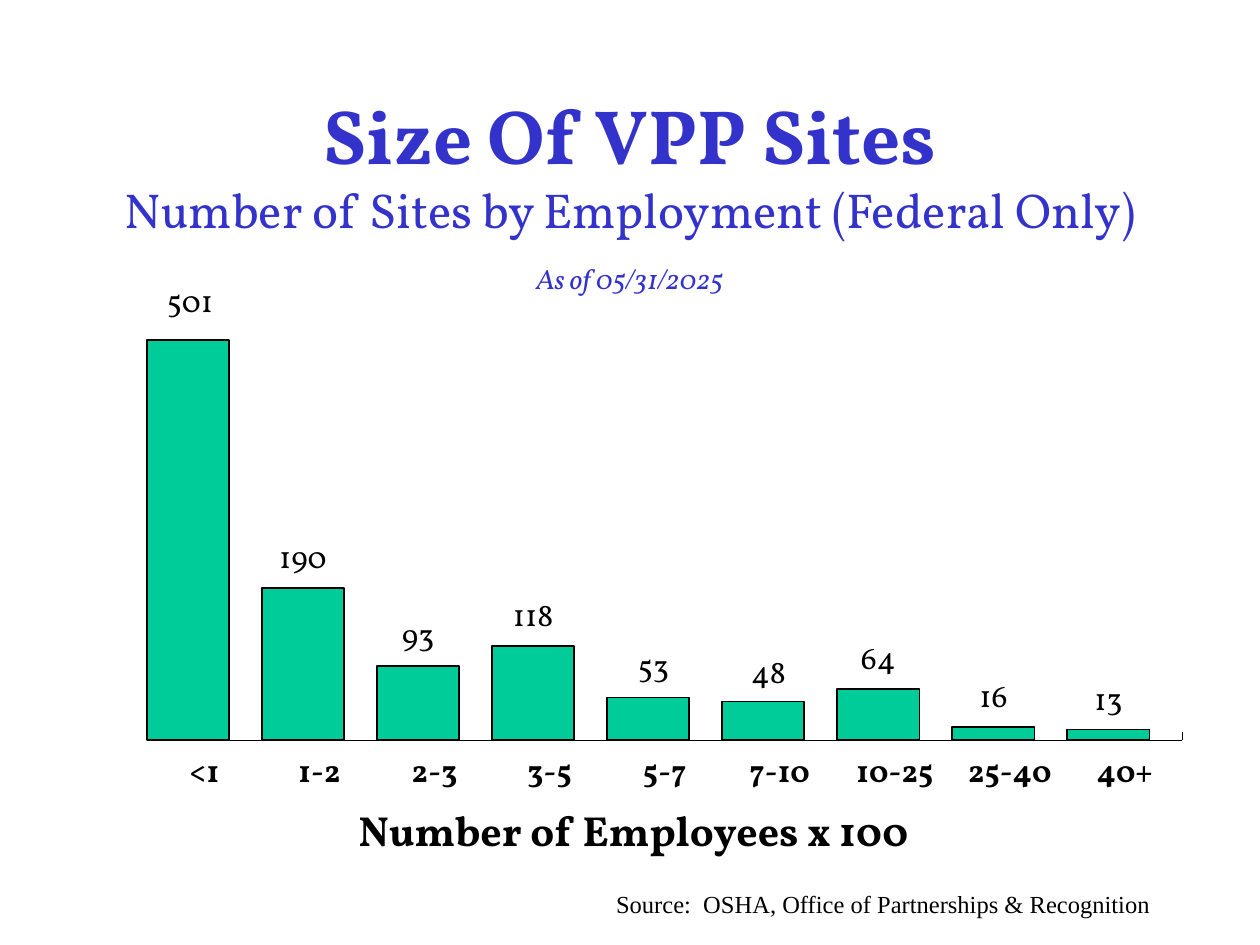
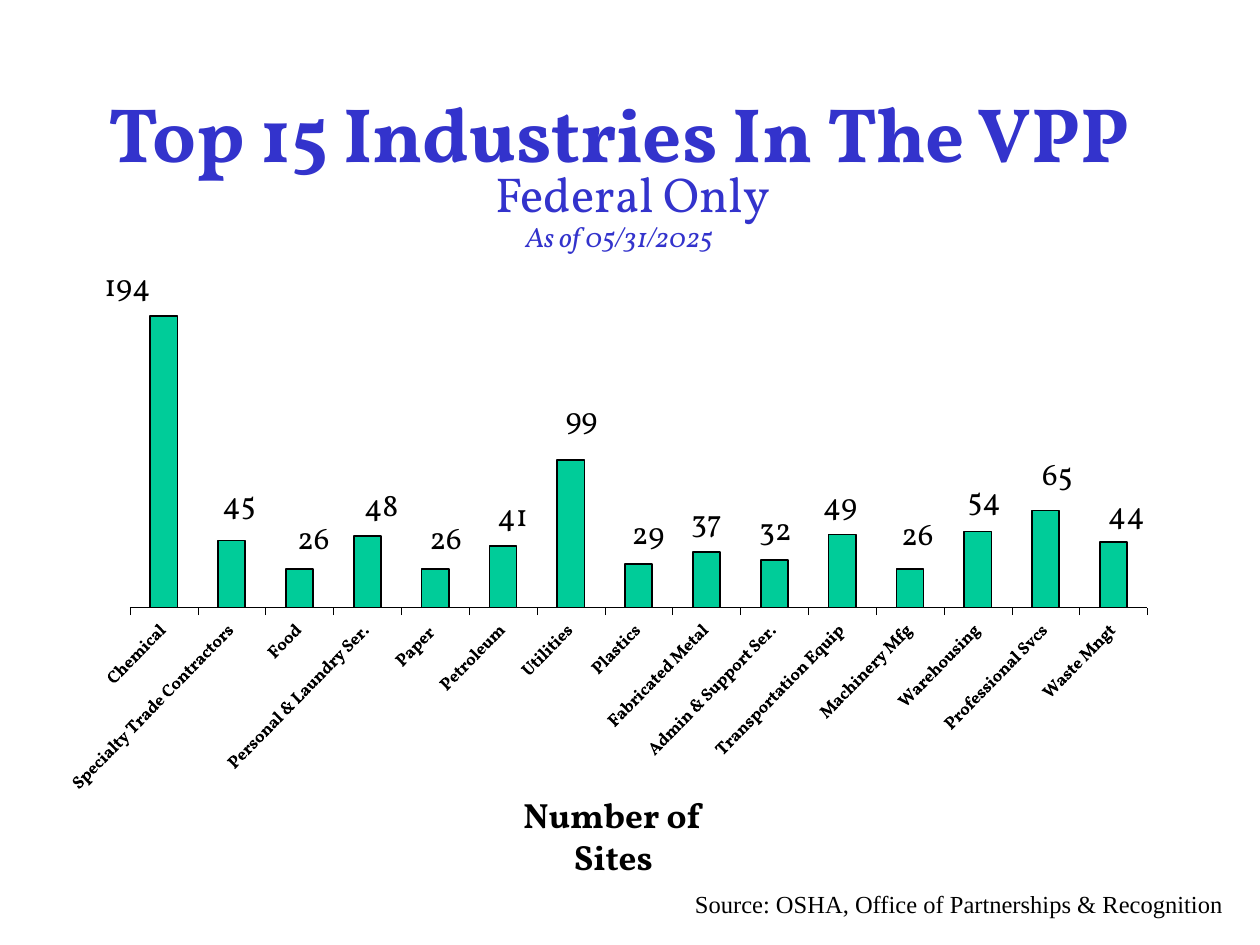
from dataclasses import dataclass
from typing import Optional

from lxml import etree
from pptx import Presentation
from pptx import util as u
from pptx.chart import data as cd
from pptx.dml import color
from pptx.enum import chart as ch, text as te
from pptx.oxml import ns

COLORS = {"title": "3333CC", "bar": "00CC99", "spare": "CCCCFF", "ink": "000000"}
HEAD_FONT, SOURCE_FONT = "Vollkorn", "Times New Roman"
LABEL_PT = 18
DATE_TEXT = "As of 05/31/2025"


@dataclass
class Box:
    """Place on the slide, in centimetres."""
    left: float
    top: float
    width: float
    height: float

    def lengths(self) -> tuple:
        return tuple(u.Cm(v) for v in (self.left, self.top, self.width, self.height))


@dataclass
class Bar:
    """One category; dx and dy move its label by a share of the chart's size."""
    name: str
    value: int
    dx: float = 0
    dy: float = 0
    label: Optional[str] = None


@dataclass
class BarChart:
    box: Box
    bars: list
    plot: tuple
    top_value: int
    gap: int
    overlap: int
    axis_pt: int
    tick: ch.XL_TICK_MARK
    label_offset: int = 100
    empty_series: int = 0
    angle: int = 0
    value_axis: bool = True


SIZE_CHART = BarChart(
    Box(2.49, 5.27, 21.39, 10.95),
    [Bar("<1", 501, 0.002, -0.015), Bar("1-2", 190), Bar("2-3", 93), Bar("3-5", 118),
     Bar("5-7", 53, 0.005, -0.002), Bar("7-10", 48, 0.005, 0.002), Bar("10-25", 64),
     Bar("25-40", 16), Bar("40+", 13)],
    plot=(0.022, 0, 0.976, 0.881), top_value=600, gap=0, overlap=80,
    axis_pt=LABEL_PT, tick=ch.XL_TICK_MARK.INSIDE, label_offset=0, empty_series=2)

INDUSTRY_CHART = BarChart(
    Box(1.37, 4.58, 22, 11.66),
    [Bar("Chemical", 195, -0.034, 0, "194"),
     Bar("Specialty Trade Contractors", 45, 0.007, -0.012),
     Bar("Food", 26, 0.013),
     Bar("Personal & Laundry Ser.", 48, 0.013),
     Bar("Paper ", 26, 0.01),
     Bar("Petroleum", 41, 0.009),
     Bar("Utilities", 99, 0.01, -0.019),
     Bar("Plastics", 29, 0.009),
     Bar("Fabricated Metal", 37),
     Bar("Admin & Support Ser.", 32, 0.001),
     Bar("Transportation Equip", 49, -0.002),
     Bar("Machinery Mfg", 26, 0.007, -0.006),
     Bar("Warehousing", 51, 0.006, -0.002, "54"),
     Bar("Professional Svcs", 65, 0.011, -0.01),
     Bar("Waste Mngt", 44, 0.012, 0.003)],
    plot=(0.037, 0.012, 0.952, 0.646), top_value=250, gap=150, overlap=0,
    axis_pt=10, tick=ch.XL_TICK_MARK.OUTSIDE, angle=-45, value_axis=False)


def rgb(name: str) -> color.RGBColor:
    return color.RGBColor.from_string(COLORS[name])


def set_font(font, size: float, name: str = HEAD_FONT, ink: str = "ink",
             bold: bool = False, italic: bool = False) -> None:
    font.size, font.name = u.Pt(size), name
    font.bold, font.italic = bold, italic
    font.color.rgb = rgb(ink)


def add_text(s, box: Box, text: str, size: float, *, subtitle: str = "",
             centre: bool = False, middle: bool = False, wrap: bool = True,
             **fmt) -> None:
    """Text box; a subtitle follows on a second line in a lighter style."""
    tf = s.shapes.add_textbox(*box.lengths()).text_frame
    tf.word_wrap = wrap
    tf.vertical_anchor = te.MSO_ANCHOR.MIDDLE if middle else te.MSO_ANCHOR.TOP
    p = tf.paragraphs[0]
    p.alignment = te.PP_ALIGN.CENTER if centre else te.PP_ALIGN.LEFT
    r = p.add_run()
    r.text = text
    set_font(r.font, size, **fmt)
    if subtitle:
        p.add_line_break()
        r = p.add_run()
        r.text = subtitle
        set_font(r.font, 28, ink="title")


def add_layout(parent, index: int, **values) -> None:
    """Manual chart layout as a child of the plot area or a data label."""
    for old in parent.findall(ns.qn("c:layout")):
        parent.remove(old)
    layout = etree.Element(ns.qn("c:layout"))
    manual = etree.SubElement(layout, ns.qn("c:manualLayout"))
    for tag, value in values.items():
        etree.SubElement(manual, ns.qn(f"c:{tag}")).set("val", str(value))
    parent.insert(index, layout)


def add_bar_labels(series, bars: list) -> None:
    series.data_labels.show_value = True
    set_font(series.data_labels.font, LABEL_PT, bold=True)
    for i, bar in enumerate(bars):
        label = series.points[i].data_label
        r = label.text_frame.paragraphs[0].add_run()
        r.text = bar.label or str(bar.value)
        set_font(r.font, LABEL_PT)
        label.position = ch.XL_LABEL_POSITION.OUTSIDE_END
    for bar, element in zip(bars, series._element.xpath("c:dLbls/c:dLbl")):
        if bar.dx or bar.dy:
            add_layout(element, 1, x=bar.dx, y=bar.dy)

    # Moved labels have no leader lines
    labels = series._element.find(ns.qn("c:dLbls"))
    leader = labels.find(ns.qn("c:showLeaderLines"))
    if leader is None:
        leader = etree.SubElement(labels, ns.qn("c:showLeaderLines"))
    leader.set("val", "0")


def add_bar_chart(s, model: BarChart) -> None:
    data = cd.CategoryChartData()
    data.categories = [b.name for b in model.bars]
    data.add_series("Series 1", [b.value for b in model.bars])
    for n in range(model.empty_series):
        data.add_series(f"Series {n + 2}", [None] * len(model.bars))
    chart = s.shapes.add_chart(ch.XL_CHART_TYPE.COLUMN_CLUSTERED,
                               *model.box.lengths(), data).chart
    chart.has_title = chart.has_legend = False
    set_font(chart.font, LABEL_PT, bold=True)

    # Bars
    plot = chart.plots[0]
    plot.vary_by_categories = False
    plot.gap_width, plot.overlap = model.gap, model.overlap
    for series, fill in zip(plot.series, ("bar", "title", "spare")):
        series.format.fill.solid()
        series.format.fill.fore_color.rgb = rgb(fill)
        series.format.line.color.rgb = rgb("ink")
        series.format.line.width = u.Pt(1)
    add_bar_labels(plot.series[0], model.bars)

    # Axes
    cat, val = chart.category_axis, chart.value_axis
    cat.major_tick_mark = model.tick
    cat.minor_tick_mark = ch.XL_TICK_MARK.NONE
    cat.tick_label_position = ch.XL_TICK_LABEL_POSITION.LOW
    cat.tick_labels.offset = model.label_offset
    cat.format.line.color.rgb = rgb("ink")
    cat.format.line.width = u.Pt(0.25)
    set_font(cat.tick_labels.font, model.axis_pt, bold=True)
    if model.angle:
        body = cat._element.find(ns.qn("c:txPr")).find(ns.qn("a:bodyPr"))
        body.set("rot", str(model.angle * 60000))
        body.set("vert", "horz")
    val.minimum_scale, val.maximum_scale = 0, model.top_value
    val.has_major_gridlines = False
    val.major_tick_mark = val.minor_tick_mark = ch.XL_TICK_MARK.NONE
    val.tick_label_position = ch.XL_TICK_LABEL_POSITION.NONE
    val.format.line.fill.background()
    val.visible = model.value_axis

    # Inner plot area
    x, y, w, h = model.plot
    area = chart._chartSpace.xpath("c:chart/c:plotArea")[0]
    add_layout(area, 0, layoutTarget="inner", xMode="edge", yMode="edge",
               x=x, y=y, w=w, h=h)


def add_title(s, left: float, top: float, text: str, subtitle: str = "") -> None:
    add_text(s, Box(left, top, 21.59, 3.18), text, 44, subtitle=subtitle,
             centre=True, middle=True, ink="title", bold=True)


def add_date(s, left: float, top: float) -> None:
    add_text(s, Box(left, top, 7.19, 1.9), DATE_TEXT, 16, centre=True,
             middle=True, ink="title", italic=True)


def add_source(s, left: float, width: float, text: str) -> None:
    add_text(s, Box(left, 17.79, width, 0.84), text, 14, name=SOURCE_FONT)


def size_slide(s) -> None:
    add_bar_chart(s, SIZE_CHART)
    add_title(s, 1.91, 1.7, "Size Of VPP Sites",
              "Number of Sites by Employment (Federal Only)")
    add_date(s, 9.1, 4.66)
    add_text(s, Box(6.98, 16.09, 11.68, 1.27), "Number of Employees x 100", 24,
             wrap=False, bold=True)
    add_source(s, 12.17, 13, "Source:  OSHA, Office of Partnerships & Recognition")


def industry_slide(s) -> None:
    add_bar_chart(s, INDUSTRY_CHART)
    add_title(s, 1.7, 1.07, "Top 15 Industries In The VPP")
    add_text(s, Box(9.74, 3.18, 6.05, 1.45), "Federal Only", 28,
             wrap=False, ink="title")
    add_date(s, 8.89, 3.81)
    add_text(s, Box(9.7, 15.88, 5.33, 1.96), "Number of Sites", 20,
             centre=True, bold=True)
    add_source(s, 13.76, 11.43, "Source: OSHA, Office of Partnerships & Recognition")


def main() -> None:
    prs = Presentation()
    prs.slide_width, prs.slide_height = u.Cm(25.4), u.Cm(19.05)
    for build in (size_slide, industry_slide):
        build(prs.slides.add_slide(prs.slide_layouts[6]))
    prs.save("out.pptx")


if __name__ == "__main__":
    main()
